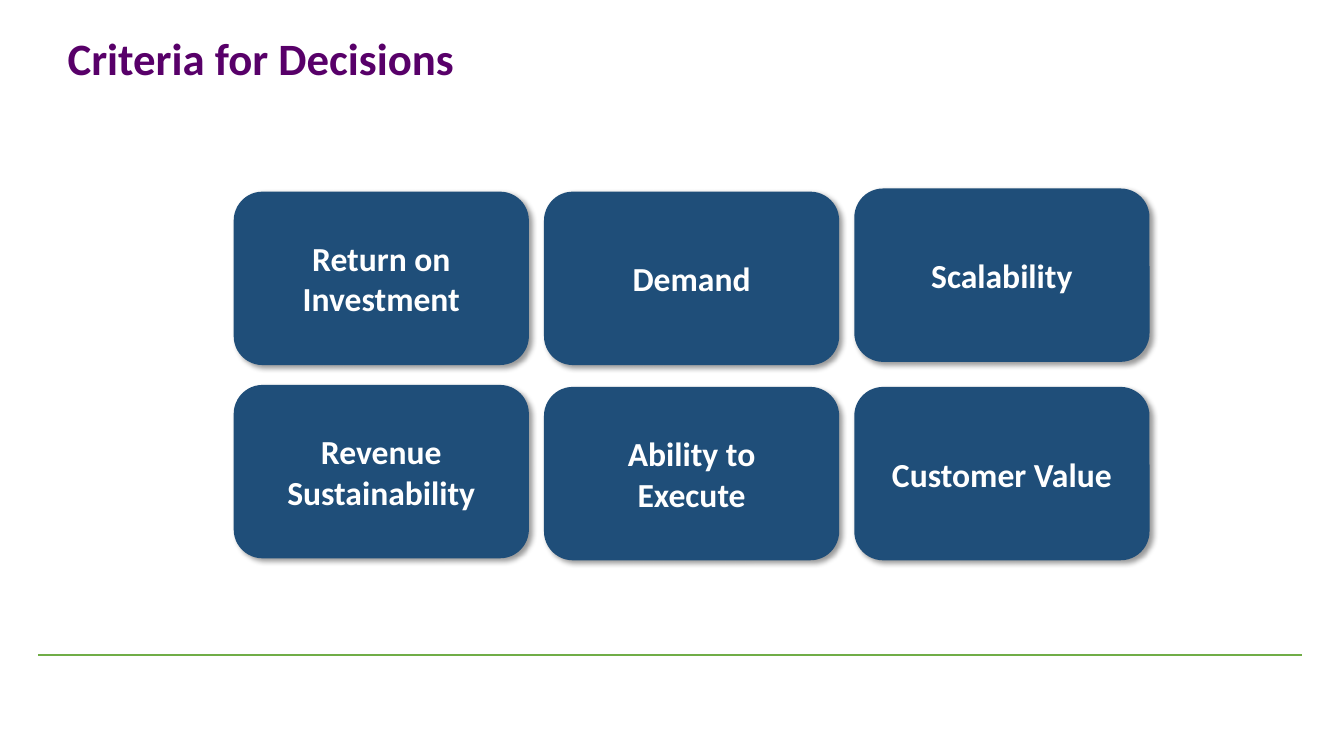
from lxml.etree import SubElement
from pptx import Presentation
from pptx.dml.color import RGBColor
from pptx.enum.shapes import MSO_CONNECTOR, MSO_SHAPE
from pptx.enum.text import MSO_ANCHOR, PP_ALIGN
from pptx.oxml.ns import qn
from pptx.util import Cm, Pt

COLOURS = {"title": "580069", "card": "1F4E79", "card_text": "FFFFFF",
           "rule": "70AD47", "shadow": "000000"}
CARD_LEFT, CARD_PITCH = 5.89, 7.82
CARD_WIDTH, CARD_HEIGHT = 7.44, 4.37
CRITERIA_ROWS = [
    [("Return on Investment", 4.83), ("Demand", 4.83), ("Scalability", 4.75)],
    [("Revenue Sustainability", 9.7), ("Ability to Execute", 9.75), ("Customer Value", 9.75)],
]


class SlideBuilder:
    """Holds the style and the current slide, and adds its elements."""

    def __init__(self, slide, font_name="Calibri"):
        self.slide = slide
        self.font_name = font_name

    def colour(self, name):
        return RGBColor.from_string(COLOURS[name])

    def add_text(self, text_frame, text, size, colour, alignment):
        text_frame.word_wrap = True
        text_frame.vertical_anchor = MSO_ANCHOR.MIDDLE
        paragraph = text_frame.paragraphs[0]
        paragraph.alignment = alignment
        run = paragraph.add_run()
        run.text = text
        run.font.name = self.font_name
        run.font.size = Pt(size)
        run.font.bold = True
        run.font.color.rgb = self.colour(colour)
        return paragraph

    def title(self, text):
        shape = self.slide.shapes.title
        shape.left, shape.top = Cm(1.45), Cm(0.3)
        shape.width, shape.height = Cm(20.98), Cm(2.49)
        paragraph = self.add_text(shape.text_frame, text, 32, "title", PP_ALIGN.LEFT)
        paragraph.line_spacing = 0.9

    def rule(self, left, right, top):
        line = self.slide.shapes.add_connector(
            MSO_CONNECTOR.STRAIGHT, Cm(left), Cm(top), Cm(right), Cm(top))
        line.line.color.rgb = self.colour("rule")
        line.line.width = Pt(1.5)
        SubElement(line._element.spPr, qn("a:effectLst"))

    def drop_shadow(self, shape):
        shape.shadow.inherit = False
        effects = shape._element.spPr.find(qn("a:effectLst"))
        shadow = SubElement(effects, qn("a:outerShdw"), blurRad=str(Pt(4)),
                            dist=str(Pt(3)), dir=str(45 * 60000),
                            algn="tl", rotWithShape="0")
        colour = SubElement(shadow, qn("a:srgbClr"), val=COLOURS["shadow"])
        SubElement(colour, qn("a:alpha"), val="40000")

    def card(self, text, left, top):
        shape = self.slide.shapes.add_shape(
            MSO_SHAPE.ROUNDED_RECTANGLE, Cm(left), Cm(top), Cm(CARD_WIDTH), Cm(CARD_HEIGHT))
        shape.fill.solid()
        shape.fill.fore_color.rgb = self.colour("card")
        shape.line.fill.background()
        self.drop_shadow(shape)
        text_frame = shape.text_frame
        text_frame.margin_left = text_frame.margin_right = Cm(0.5)
        text_frame.margin_top = text_frame.margin_bottom = Cm(0.4)
        self.add_text(text_frame, text, 24, "card_text", PP_ALIGN.CENTER)


def main():
    presentation = Presentation()
    presentation.slide_width, presentation.slide_height = Cm(33.87), Cm(19.05)
    slide = presentation.slides.add_slide(presentation.slide_layouts[5])
    builder = SlideBuilder(slide)
    builder.rule(0.97, 32.82, 16.51)
    builder.title("Criteria for Decisions")
    for row in CRITERIA_ROWS:
        for column, (text, top) in enumerate(row):
            builder.card(text, CARD_LEFT + column * CARD_PITCH, top)
    presentation.save("out.pptx")


if __name__ == "__main__":
    main()
